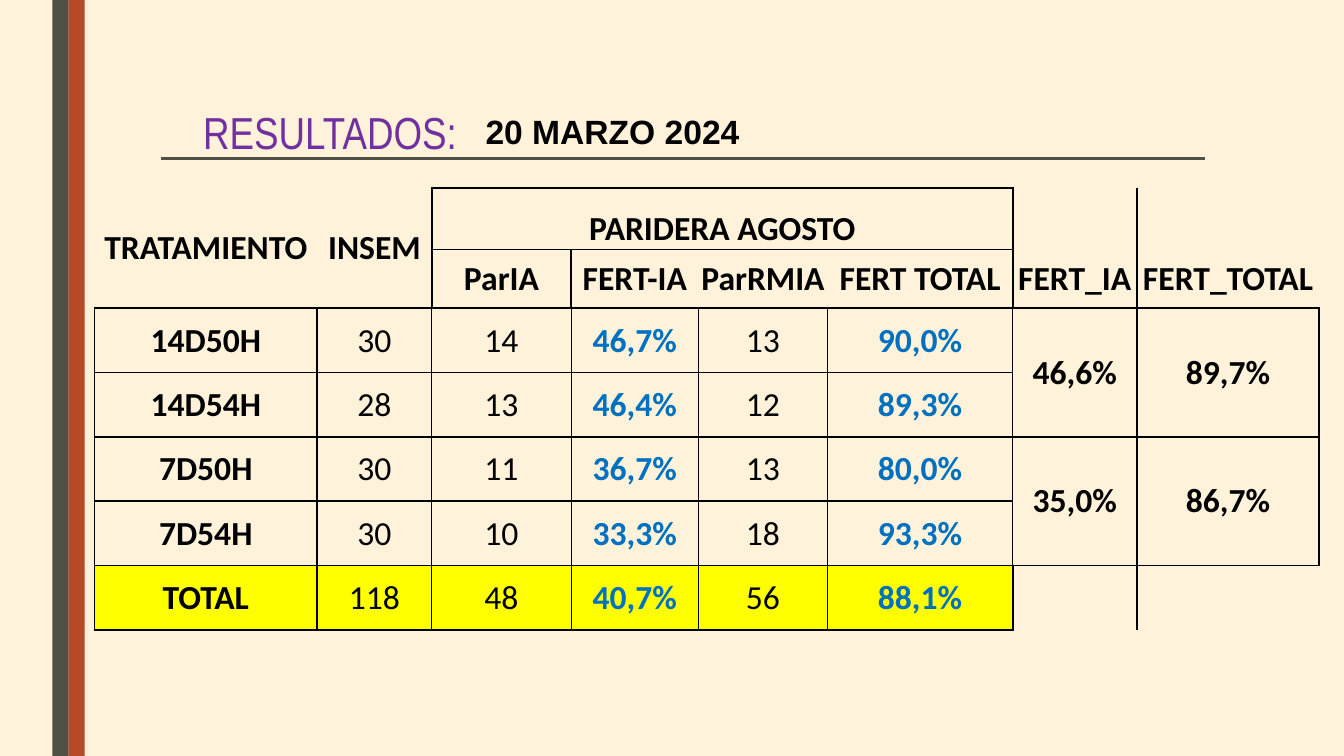
from collections import defaultdict

from lxml.etree import SubElement
from pptx import Presentation
from pptx.dml.color import RGBColor
from pptx.enum.shapes import MSO_CONNECTOR, MSO_SHAPE
from pptx.enum.text import MSO_ANCHOR as ANCHOR, PP_ALIGN as ALIGN
from pptx.oxml.ns import qn
from pptx.util import Pt

CREAM = RGBColor(0xFF, 0xF2, 0xDA)
RUST = RGBColor(0xB6, 0x49, 0x26)
OLIVE = RGBColor(0x50, 0x50, 0x46)
PURPLE = RGBColor(0x70, 0x30, 0xA0)
BLUE = RGBColor(0x00, 0x70, 0xC0)
YELLOW = RGBColor(0xFF, 0xFF, 0x00)
BLACK = RGBColor(0, 0, 0)

NO_STYLE = "{2D5ABB26-0587-4C30-8999-92F81FD0307C}"
COLUMN_WIDTHS = [159, 82, 99.5, 91, 92, 132.5, 88.5, 130.5]
ROW_HEIGHTS = [44, 42] + [46] * 5
HEADER_ROWS = 2
TOTAL_ROW = 6
COUNT_COLUMNS = (1, 2, 4)
FERTILITY_COLUMNS = (3, 5)
RESULTS = [
    ["TRATAMIENTO", "INSEM", "PARIDERA AGOSTO", "", "", "", "", ""],
    ["", "", "ParIA", "FERT-IA", "ParRMIA", "FERT TOTAL", "FERT_IA", "FERT_TOTAL"],
    ["14D50H", "30", "14", "46,7%", "13", "90,0%", "46,6%", "89,7%"],
    ["14D54H", "28", "13", "46,4%", "12", "89,3%", "", ""],
    ["7D50H", "30", "11", "36,7%", "13", "80,0%", "35,0%", "86,7%"],
    ["7D54H", "30", "10", "33,3%", "18", "93,3%", "", ""],
    ["TOTAL", "118", "48", "40,7%", "56", "88,1%", "", ""],
]
# First row, first column, last row, last column
MERGES = [(0, 0, 1, 0), (0, 1, 1, 1), (0, 2, 0, 5),
          (2, 6, 3, 6), (2, 7, 3, 7), (4, 6, 5, 6), (4, 7, 5, 7)]
# Grid line number, first column, last column, weight
ROW_RULES = [(0, 2, 5, 1.5), (1, 2, 5, 0.5), (2, 0, 7, 1.5), (3, 0, 5, 1),
             (4, 0, 7, 1.5), (5, 0, 5, 1), (6, 0, 7, 1.5), (7, 0, 5, 1.5)]
# Grid line number, first row, last row, weight
COLUMN_RULES = [(0, 2, 6, 1.5), (1, 2, 6, 1), (2, 0, 1, 1.5), (2, 2, 6, 1),
                (3, 2, 6, 1), (4, 2, 6, 1), (5, 2, 6, 1), (6, 0, 1, 1.5),
                (6, 2, 5, 1), (6, 6, 6, 1.5), (7, 2, 5, 1.5), (8, 2, 5, 1.5)]


def add_side_bars(page, left, top, height):
    width = 11.5
    for index, color in enumerate((OLIVE, RUST)):
        bar = page.shapes.add_shape(MSO_SHAPE.RECTANGLE, Pt(left + index * width),
                                    Pt(top), Pt(width), Pt(height))
        bar.shadow.inherit = False
        bar.fill.solid()
        bar.fill.fore_color.rgb = color
        bar.line.fill.background()


def add_label(page, left, top, width, height, text, font_name, size, color,
              bold=False, align=ALIGN.LEFT):
    box = page.shapes.add_textbox(Pt(left), Pt(top), Pt(width), Pt(height))
    box.text_frame.word_wrap = True
    para = box.text_frame.paragraphs[0]
    para.text = text
    para.alignment = align
    set_font(para.font, font_name, size, color, bold)


def set_font(font, name, size, color, bold):
    font.name = name
    font.size = Pt(size)
    font.color.rgb = color
    font.bold = bold


def add_heading(page, left, top, width):
    add_label(page, left + 23, top, 341, 46, "RESULTADOS:", "Arial Narrow", 32, PURPLE)
    add_label(page, left + 183, top + 5, 279, 36, "20 MARZO 2024", "Arial", 24,
              BLACK, True, ALIGN.CENTER)
    base = Pt(top + 42.5)
    rule = page.shapes.add_connector(MSO_CONNECTOR.STRAIGHT, Pt(left), base,
                                     Pt(left + width), base)
    rule.line.color.rgb = OLIVE
    rule.line.width = Pt(2.25)
    SubElement(rule._element.spPr, qn("a:effectLst"))


def collect_borders():
    """Return the border weights of each cell, by (row, column) and side."""
    owners = {(row, column): (top, left)
              for top, left, bottom, right in MERGES
              for row in range(top, bottom + 1)
              for column in range(left, right + 1)}
    borders = defaultdict(dict)

    def mark(row, column, side, weight):
        for place in ((row, column), owners.get((row, column), (row, column))):
            borders[place][side] = weight

    for line, first, last, weight in ROW_RULES:
        for column in range(first, last + 1):
            mark(line - 1, column, "B", weight)
            mark(line, column, "T", weight)
    for line, first, last, weight in COLUMN_RULES:
        for row in range(first, last + 1):
            mark(row, line - 1, "R", weight)
            mark(row, line, "L", weight)
    return borders


def draw_borders(cell, weights):
    properties = cell._tc.get_or_add_tcPr()
    for side in "LRTB":
        if side in weights:
            edge = SubElement(properties, qn(f"a:ln{side}"), w=str(Pt(weights[side])))
            fill = SubElement(edge, qn("a:solidFill"))
            SubElement(fill, qn("a:srgbClr"), val=str(BLACK))


def fill_cell(cell, row, column, text):
    if row == TOTAL_ROW and column <= 5:
        cell.fill.solid()
        cell.fill.fore_color.rgb = YELLOW
    else:
        cell.fill.background()
    cell.margin_left = cell.margin_right = cell.margin_top = Pt(0.7)
    cell.margin_bottom = 0
    is_banner = (row, column) == (0, 2)
    cell.vertical_anchor = ANCHOR.BOTTOM if is_banner else ANCHOR.MIDDLE
    if text:
        in_body = row >= HEADER_ROWS
        para = cell.text_frame.paragraphs[0]
        para.text = text
        para.alignment = ALIGN.CENTER
        set_font(para.font, "Calibri", 24,
                 BLUE if in_body and column in FERTILITY_COLUMNS else BLACK,
                 not (in_body and column in COUNT_COLUMNS))


def add_results_table(page, left, top):
    frame = page.shapes.add_table(len(ROW_HEIGHTS), len(COLUMN_WIDTHS), Pt(left), Pt(top),
                                  Pt(sum(COLUMN_WIDTHS)), Pt(sum(ROW_HEIGHTS)))
    table = frame.table
    table.first_row = table.horz_banding = False
    next(frame._element.iter(qn("a:tableStyleId"))).text = NO_STYLE
    for column, width in zip(table.columns, COLUMN_WIDTHS):
        column.width = Pt(width)
    for row, height in zip(table.rows, ROW_HEIGHTS):
        row.height = Pt(height)
    for first_row, first_column, last_row, last_column in MERGES:
        table.cell(first_row, first_column).merge(table.cell(last_row, last_column))
    borders = collect_borders()
    for row, texts in enumerate(RESULTS):
        for column, text in enumerate(texts):
            cell = table.cell(row, column)
            draw_borders(cell, borders[row, column])
            fill_cell(cell, row, column, text)


def main():
    deck = Presentation()
    deck.slide_width, deck.slide_height = Pt(960), Pt(540)
    page = deck.slides.add_slide(deck.slide_layouts[6])
    page.background.fill.solid()
    page.background.fill.fore_color.rgb = CREAM
    add_side_bars(page, 37.5, 0, 540)
    add_heading(page, 115, 71, 746)
    add_results_table(page, 67.5, 134)
    deck.save("out.pptx")


if __name__ == "__main__":
    main()
